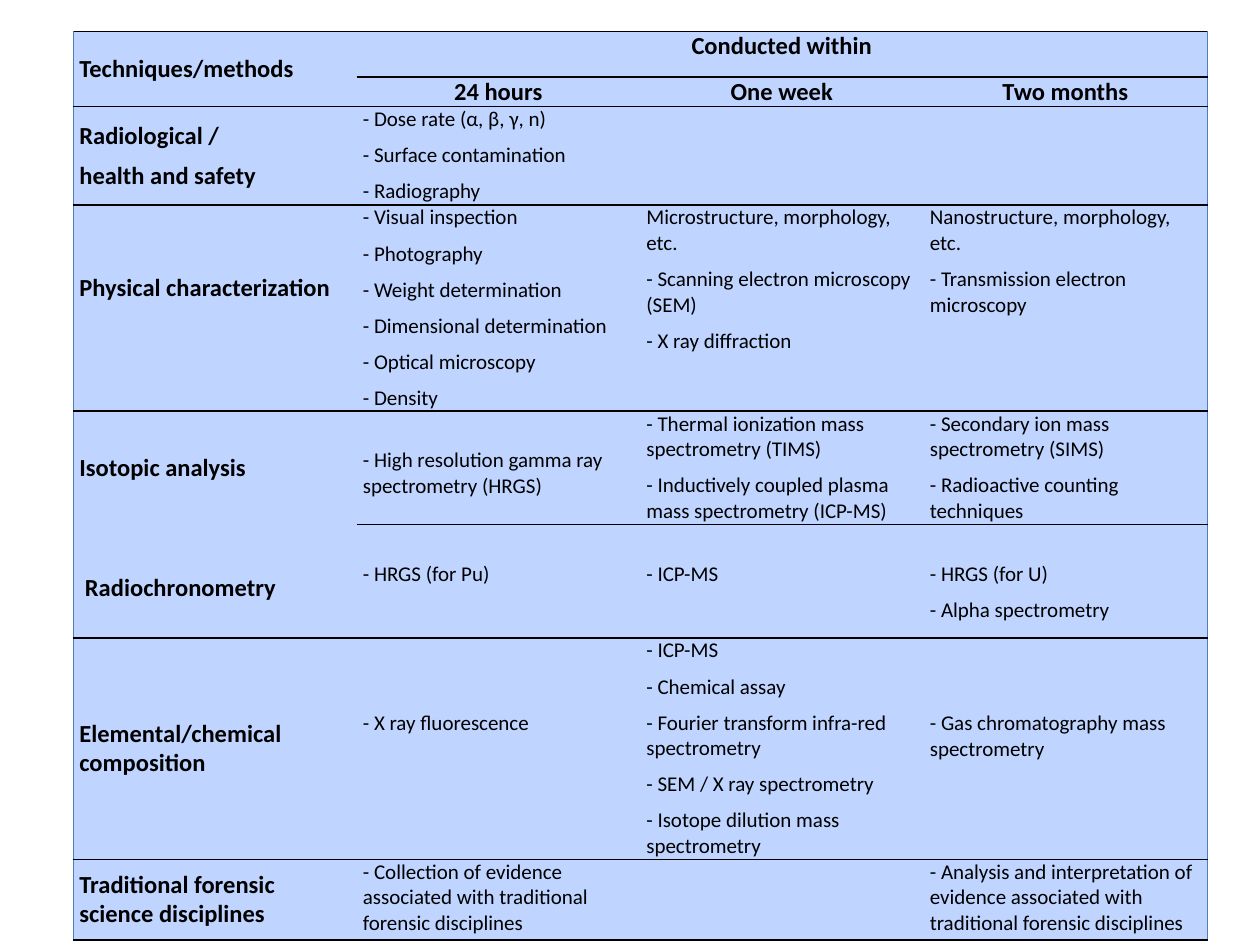
"""Build a slide with a table of forensic techniques by time frame."""
from lxml.etree import SubElement
from pptx import Presentation
from pptx.dml.color import RGBColor as Rgb
from pptx.enum.text import MSO_ANCHOR as Anchor, PP_ALIGN as Align
from pptx.oxml.ns import qn
from pptx.util import Inches, Pt

THEME = dict(font="Calibri", ink="000000", fill="BFD4FF", edge="4B7EBC",
             head=14, body=12, gap=3, rule=1, side=0.75)
SIZE = (10, 7.5)
LEFT, TOP, COL = 0.58, 0.25, 2.25
STEP = 0.29

ROWS = [
    (0.36, [["Techniques/methods"], [], ["Conducted within"], []]),
    (0.23, [[], ["24 hours"], ["One week"], ["Two months"]]),
    (0.78, [["Radiological /", "health and safety"],
            ["- Dose rate (α, β, γ, n)", "- Surface contamination", "- Radiography"],
            [], []]),
    (1.63, [["Physical characterization"],
            ["- Visual inspection", "- Photography", "- Weight determination",
             "- Dimensional determination", "- Optical microscopy", "- Density"],
            ["Microstructure, morphology, etc.",
             "- Scanning electron microscopy (SEM)", "- X ray diffraction"],
            ["Nanostructure, morphology, etc.",
             "- Transmission electron microscopy"]]),
    (0.9, [["Isotopic analysis", " Radiochronometry"],
           ["- High resolution gamma ray spectrometry (HRGS)"],
           ["- Thermal ionization mass spectrometry (TIMS)",
            "- Inductively coupled plasma mass spectrometry (ICP-MS)"],
           ["- Secondary ion mass spectrometry (SIMS)",
            "- Radioactive counting techniques"]]),
    (0.9, [[], ["- HRGS (for Pu)"], ["- ICP-MS"],
           ["- HRGS (for U)", "- Alpha spectrometry"]]),
    (1.75, [["Elemental/chemical composition"],
            ["- X ray fluorescence"],
            ["- ICP-MS", "- Chemical assay",
             "- Fourier transform infra-red spectrometry",
             "- SEM / X ray spectrometry", "- Isotope dilution mass spectrometry"],
            ["- Gas chromatography mass spectrometry"]]),
    (0.64, [["Traditional forensic science disciplines"],
            ["- Collection of evidence associated with traditional forensic disciplines"],
            [],
            ["- Analysis and interpretation of evidence associated with "
             "traditional forensic disciplines"]]),
]
SPANS = [(0, 1), (4, 5)]
DROPS = {(4, 0): 0.33, (4, 1): STEP, (5, 1): STEP, (5, 2): STEP, (5, 3): STEP,
         (6, 1): 2 * STEP, (6, 3): 2 * STEP}
LIFTS = {(3, 0): 0.32}
LEADS = {(4, 0): 49}


def border(cell, side, color, width):
    line = SubElement(cell._tc.get_or_add_tcPr(), qn(f"a:ln{side}"), w=str(Pt(width)))
    if color:
        fill = SubElement(line, qn("a:solidFill"))
        SubElement(fill, qn("a:srgbClr"), val=color)
    else:
        SubElement(line, qn("a:noFill"))


def frame(cell, row, col):
    side, rule = THEME["side"], THEME["rule"]
    inner = {first for first, _ in SPANS} if col == 0 else set()
    border(cell, "L", THEME["edge"] if col == 0 else None, side)
    border(cell, "R", THEME["edge"] if col == 3 else None, side)
    border(cell, "T", None if row - 1 in inner else THEME["ink"], rule)
    open_end = row in inner and not cell.is_merge_origin
    border(cell, "B", None if open_end else THEME["ink"], rule)
    cell.fill.solid()
    cell.fill.fore_color.rgb = Rgb.from_string(THEME["fill"])


def write(cell, lines, row, col):
    key, head = (row, col), row < 2 or col == 0
    look = dict(margin_left=Inches(0.05), margin_right=Inches(0.05),
                margin_top=Inches(DROPS.get(key, 0)),
                margin_bottom=Inches(LIFTS.get(key, 0)),
                vertical_anchor=Anchor.MIDDLE if col == 0 and key not in DROPS
                else Anchor.TOP)
    for name, value in look.items():
        setattr(cell, name, value)
    text = cell.text_frame
    for i, words in enumerate(lines or [""]):
        para = text.add_paragraph() if i else text.paragraphs[0]
        para.space_before = Pt(LEADS.get(key, THEME["gap"]) if i else THEME["gap"])
        para.space_after = Pt(THEME["gap"])
        para.alignment = Align.CENTER if row < 2 and col else Align.LEFT
        para.font.size = Pt(THEME["body"])
        if words:
            run = para.add_run()
            run.text = words
            style = dict(name=THEME["font"], bold=head,
                         size=Pt(THEME["head" if head else "body"]))
            for name, value in style.items():
                setattr(run.font, name, value)
            run.font.color.rgb = Rgb.from_string(THEME["ink"])


def main():
    deck = Presentation()
    deck.slide_width, deck.slide_height = map(Inches, SIZE)
    slide = deck.slides.add_slide(deck.slide_layouts[6])
    tall = sum(height for height, _ in ROWS)
    table = slide.shapes.add_table(len(ROWS), 4, Inches(LEFT), Inches(TOP),
                                   Inches(4 * COL), Inches(tall)).table
    table.first_row = table.horz_banding = False
    for first, last in SPANS:
        table.cell(first, 0).merge(table.cell(last, 0))
    for row, (height, cells) in enumerate(ROWS):
        table.rows[row].height = Inches(height)
        for col, lines in enumerate(cells):
            cell = table.cell(row, col)
            frame(cell, row, col)
            write(cell, lines, row, col)
    deck.save("out.pptx")


if __name__ == "__main__":
    main()
